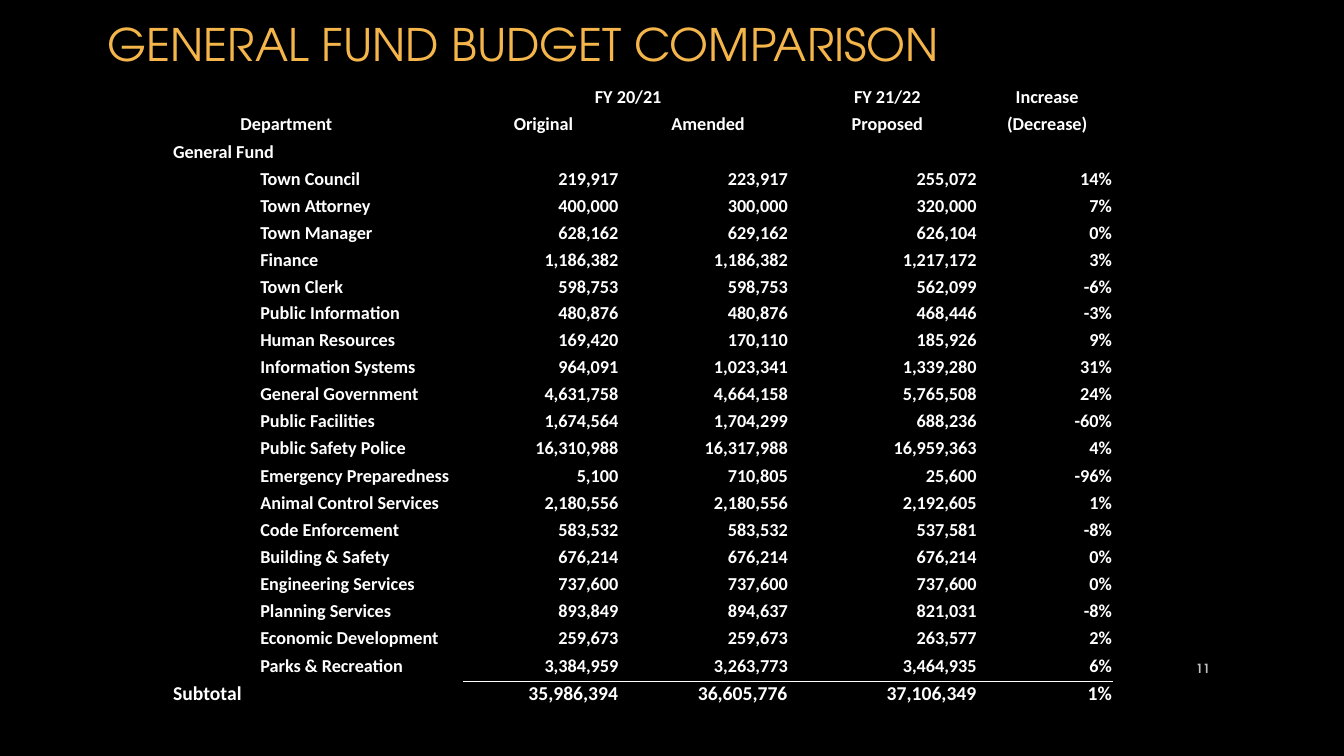
from lxml import etree
from pptx import Presentation
from pptx import util as u
from pptx.dml.color import RGBColor
from pptx.enum import text
from pptx.oxml.ns import qn

BLACK = RGBColor(0x00, 0x00, 0x00)
WHITE = RGBColor(0xFF, 0xFF, 0xFF)
GOLD = RGBColor(0xF4, 0xB5, 0x4B)
GREY = RGBColor(0xBF, 0xBF, 0xBF)
HEADING_FONT = "TeX Gyre Adventor"
BODY_FONT = "Calibri"
PLAIN_GRID = "{2D5ABB26-0587-4C30-8999-92F81FD0307C}"
LEFT, CENTER, RIGHT = text.PP_ALIGN.LEFT, text.PP_ALIGN.CENTER, text.PP_ALIGN.RIGHT

COLUMN_WIDTHS = [1.7, 0.5, 5.14, 4.03, 4.27, 4.76, 3.3]
FIRST_FIGURE, LAST_FIGURE = 3, 5
SHORT_ROW, SHORT_HEIGHT = 7, 0.64

HEADINGS = [
    ["", "", "", "FY 20/21", "", "FY 21/22", "Increase"],
    ["", "Department", "", "Original", "Amended", "Proposed", "(Decrease)"],
    ["General Fund", "", "", "", "", "", ""],
]
DEPARTMENTS = [
    ("Town Council", "219,917", "223,917", "255,072", "14%"),
    ("Town Attorney", "400,000", "300,000", "320,000", "7%"),
    ("Town Manager", "628,162", "629,162", "626,104", "0%"),
    ("Finance", "1,186,382", "1,186,382", "1,217,172", "3%"),
    ("Town Clerk", "598,753", "598,753", "562,099", "-6%"),
    ("Public Information", "480,876", "480,876", "468,446", "-3%"),
    ("Human Resources", "169,420", "170,110", "185,926", "9%"),
    ("Information Systems", "964,091", "1,023,341", "1,339,280", "31%"),
    ("General Government", "4,631,758", "4,664,158", "5,765,508", "24%"),
    ("Public Facilities", "1,674,564", "1,704,299", "688,236", "-60%"),
    ("Public Safety Police", "16,310,988", "16,317,988", "16,959,363", "4%"),
    ("Emergency Preparedness", "5,100", "710,805", "25,600", "-96%"),
    ("Animal Control Services", "2,180,556", "2,180,556", "2,192,605", "1%"),
    ("Code Enforcement", "583,532", "583,532", "537,581", "-8%"),
    ("Building & Safety", "676,214", "676,214", "676,214", "0%"),
    ("Engineering Services", "737,600", "737,600", "737,600", "0%"),
    ("Planning Services", "893,849", "894,637", "821,031", "-8%"),
    ("Economic Development", "259,673", "259,673", "263,577", "2%"),
    ("Parks & Recreation", "3,384,959", "3,263,773", "3,464,935", "6%"),
]
SUBTOTAL = ["Subtotal", "", "", "35,986,394", "36,605,776", "37,106,349", "1%"]


def format_paragraph(paragraph, font_name, size, color, bold, align):
    paragraph.alignment = align
    font = paragraph.font
    font.name, font.size, font.bold = font_name, u.Pt(size), bold
    font.color.rgb = color


def add_title(slide, left, top, width, height):
    title = slide.shapes.title
    title.left, title.top = u.Cm(left), u.Cm(top)
    title.width, title.height = u.Cm(width), u.Cm(height)
    frame = title.text_frame
    frame.text = "GENERAL FUND BUDGET COMPARISON"
    frame.vertical_anchor = text.MSO_ANCHOR.MIDDLE
    format_paragraph(frame.paragraphs[0], HEADING_FONT, 32, GOLD, False, LEFT)


def add_rule(cell, side):
    rule = etree.Element(qn(f"a:{side}"), w=str(u.Pt(1)))
    fill = etree.SubElement(rule, qn("a:solidFill"))
    etree.SubElement(fill, qn("a:srgbClr"), val=str(WHITE))
    cell._tc.get_or_add_tcPr().insert(0, rule)


def fill_cell(cell, words, size, align, right_margin):
    cell.fill.background()
    cell.margin_left = cell.margin_top = u.Cm(0.02)
    cell.margin_right, cell.margin_bottom = u.Cm(right_margin), 0
    cell.vertical_anchor = text.MSO_ANCHOR.TOP
    cell.text = words
    format_paragraph(cell.text_frame.paragraphs[0], BODY_FONT, size, WHITE, True, align)


def add_budget_table(slide, left, top, height):
    rows = HEADINGS + [["", "", *department] for department in DEPARTMENTS] + [SUBTOTAL]
    last = len(rows) - 1
    frame = slide.shapes.add_table(len(rows), len(COLUMN_WIDTHS), u.Cm(left), u.Cm(top),
                                   u.Cm(sum(COLUMN_WIDTHS)), u.Cm(height))
    table = frame.table
    table.first_row = table.horz_banding = False
    next(frame.element.iter(qn("a:tableStyleId"))).text = PLAIN_GRID

    for column, width in zip(table.columns, COLUMN_WIDTHS):
        column.width = u.Cm(width)
    for index, row in enumerate(table.rows):
        row.height = u.Cm(SHORT_HEIGHT if index == SHORT_ROW else (height - SHORT_HEIGHT) / last)

    for r, row in enumerate(rows):
        for c, words in enumerate(row):
            is_heading = r < len(HEADINGS)
            align = LEFT if c < FIRST_FIGURE else CENTER if is_heading else RIGHT
            is_figure = FIRST_FIGURE <= c <= LAST_FIGURE and not is_heading
            cell = table.cell(r, c)
            fill_cell(cell, words, 14 if r == last else 13, align, 0.13 if is_figure else 0.02)
            if c >= FIRST_FIGURE and r >= last - 1:
                add_rule(cell, "lnT" if r == last else "lnB")

    spans = [(0, 1, 2), (0, 3, 4), (1, 1, 2), (2, 0, 2)]
    spans += [(r, 0, 1) for r in range(len(HEADINGS), len(rows))]
    for r, first, final in spans:
        table.cell(r, first).merge(table.cell(r, final))


def add_page_number(slide, left, top, width, height):
    frame = slide.shapes.add_textbox(u.Cm(left), u.Cm(top), u.Cm(width), u.Cm(height)).text_frame
    frame.word_wrap = True
    frame.vertical_anchor = text.MSO_ANCHOR.MIDDLE
    frame.text = "11"
    format_paragraph(frame.paragraphs[0], HEADING_FONT, 9, GREY, True, RIGHT)


def main():
    deck = Presentation()
    deck.slide_width, deck.slide_height = u.Cm(33.87), u.Cm(19.05)
    slide = deck.slides.add_slide(deck.slide_layouts[5])
    slide.background.fill.solid()
    slide.background.fill.fore_color.rgb = BLACK
    add_title(slide, 2.46, 0.03, 27.5, 2.13)
    add_budget_table(slide, 4.34, 2.16, 15.7)
    add_page_number(slide, 29.2, 16.33, 1.54, 1.02)
    deck.save("out.pptx")


if __name__ == "__main__":
    main()
